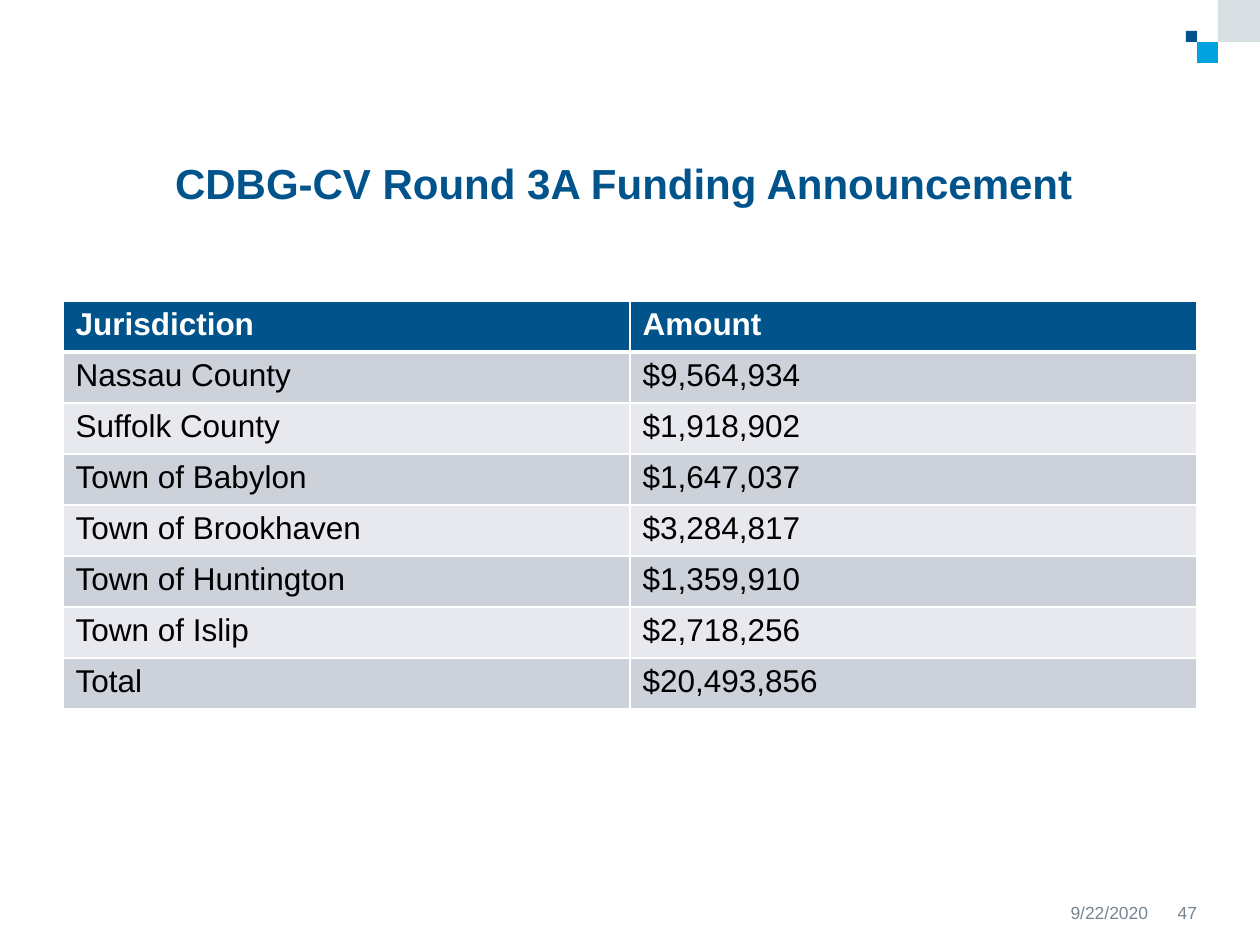
import pptx
import pptx.dml.color
import pptx.enum.shapes
import pptx.enum.text
import pptx.oxml
import pptx.oxml.ns
import pptx.util

RGBColor = pptx.dml.color.RGBColor
NAVY = RGBColor(0x00, 0x53, 0x8B)
SKY = RGBColor(0x00, 0xA2, 0xE0)
MIST = RGBColor(0xD8, 0xE0, 0xE3)
SLATE = RGBColor(0x76, 0x85, 0x91)
DARK_BAND = RGBColor(0xCC, 0xD1, 0xDA)
LIGHT_BAND = RGBColor(0xE7, 0xE9, 0xEE)
WHITE = RGBColor(0xFF, 0xFF, 0xFF)
BLACK = RGBColor(0x00, 0x00, 0x00)

PX_PER_INCH = 126
FUNDING = [
    ("Jurisdiction", "Amount"),
    ("Nassau County", "$9,564,934"),
    ("Suffolk County", "$1,918,902"),
    ("Town of Babylon", "$1,647,037"),
    ("Town of Brookhaven", "$3,284,817"),
    ("Town of Huntington", "$1,359,910"),
    ("Town of Islip", "$2,718,256"),
    ("Total", "$20,493,856"),
]


def px(length):
    """Turn a length in px into EMU."""
    return pptx.util.Emu(round(length * 914400 / PX_PER_INCH))


def format_font(paragraph, size, color, bold=False):
    """Set the font of a whole paragraph."""
    font = paragraph.font
    font.name = "Arial"
    font.size = pptx.util.Pt(size)
    font.bold = bold
    font.color.rgb = color


def clear_margins(frame):
    """Remove the inner margins of a text frame and let it wrap."""
    frame.margin_left = frame.margin_top = frame.margin_right = frame.margin_bottom = 0
    frame.word_wrap = True


def add_corner_squares(slide, left, top):
    """Draw the three decorative squares in the top right corner."""
    squares = [(0, 31, 11, NAVY), (11, 42, 21, SKY), (32, 0, 42, MIST)]
    for offset_x, offset_y, side, color in squares:
        square = slide.shapes.add_shape(
            pptx.enum.shapes.MSO_SHAPE.RECTANGLE,
            px(left + offset_x), px(top + offset_y), px(side), px(side))
        square.shadow.inherit = False
        square.fill.solid()
        square.fill.fore_color.rgb = color
        square.line.fill.background()


def place_title(slide, left, top, width, height):
    """Move the title placeholder into its box and format it."""
    title = slide.shapes.title
    title.left, title.top, title.width, title.height = map(px, (left, top, width, height))
    frame = title.text_frame
    frame.text = "CDBG-CV Round 3A Funding Announcement"
    clear_margins(frame)
    frame.auto_size = pptx.enum.text.MSO_AUTO_SIZE.NONE
    frame.vertical_anchor = pptx.enum.text.MSO_ANCHOR.TOP
    paragraph = frame.paragraphs[0]
    paragraph.alignment = pptx.enum.text.PP_ALIGN.LEFT
    paragraph.line_spacing = 0.9
    format_font(paragraph, 24, NAVY, bold=True)


def set_borders(cell, bottom_width):
    """Give a cell white borders with its own bottom width in points."""
    properties = cell._tc.get_or_add_tcPr()
    widths = {"lnL": 1, "lnR": 1, "lnT": 1, "lnB": bottom_width}
    for index, (tag, width) in enumerate(widths.items()):
        properties.insert(index, pptx.oxml.parse_xml(
            f'<a:{tag} {pptx.oxml.ns.nsdecls("a")} w="{pptx.util.Pt(width)}">'
            f'<a:solidFill><a:srgbClr val="{WHITE}"/></a:solidFill></a:{tag}>'))


def add_funding_table(slide, left, top, width, height):
    """Add the table of amounts by jurisdiction."""
    table = slide.shapes.add_table(
        len(FUNDING), len(FUNDING[0]), px(left), px(top), px(width), px(height)).table
    for row_index, row in enumerate(FUNDING):
        is_header = row_index == 0
        band = DARK_BAND if row_index % 2 else LIGHT_BAND
        for column_index, text in enumerate(row):
            cell = table.cell(row_index, column_index)
            cell.text = text
            cell.fill.solid()
            cell.fill.fore_color.rgb = NAVY if is_header else band
            format_font(cell.text_frame.paragraphs[0], 18,
                        WHITE if is_header else BLACK, bold=is_header)
            set_borders(cell, 3 if is_header else 1)


def add_footer(slide, left, top, height):
    """Add the date and the slide number side by side."""
    for text, offset, width in [("9/22/2020", 0, 131), ("47", 131, 49)]:
        box = slide.shapes.add_textbox(px(left + offset), px(top), px(width), px(height))
        frame = box.text_frame
        frame.text = text
        clear_margins(frame)
        frame.vertical_anchor = pptx.enum.text.MSO_ANCHOR.BOTTOM
        paragraph = frame.paragraphs[0]
        paragraph.alignment = pptx.enum.text.PP_ALIGN.RIGHT
        format_font(paragraph, 10, SLATE)


def main():
    """Build the funding announcement slide and save it."""
    presentation = pptx.Presentation()
    presentation.slide_width, presentation.slide_height = px(1260), px(945)
    slide = presentation.slides.add_slide(presentation.slide_layouts[5])
    add_corner_squares(slide, 1186, 0)
    place_title(slide, 175, 163, 919, 74)
    add_funding_table(slide, 63, 301, 1134, 408)
    add_footer(slide, 1017, 873, 50)
    presentation.save("out.pptx")


if __name__ == "__main__":
    main()
